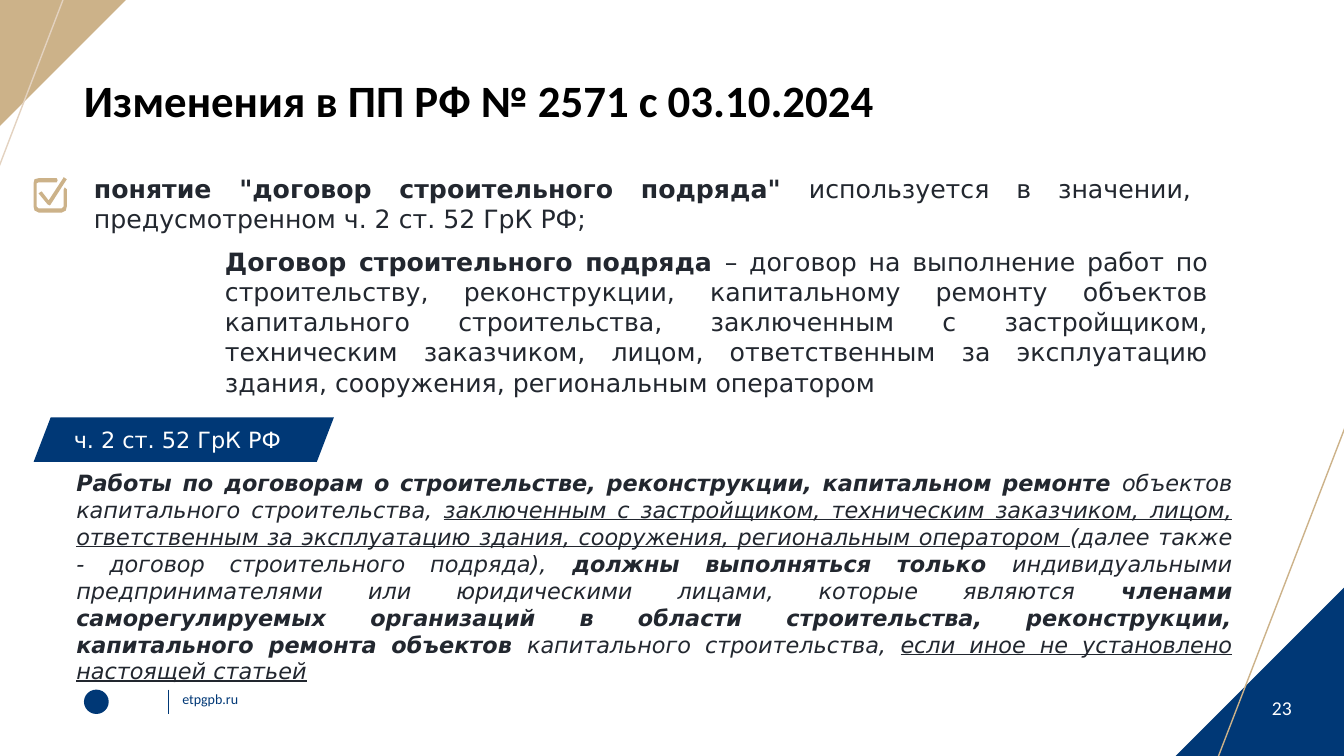
from pptx import Presentation
from pptx.dml.color import RGBColor
from pptx.enum.shapes import MSO_CONNECTOR as CONN, MSO_SHAPE as SHAPE
from pptx.enum.text import MSO_ANCHOR as ANCHOR, MSO_AUTO_SIZE as FIT, PP_ALIGN as ALIGN
from pptx.oxml.ns import qn
from pptx.util import Inches, Pt
from lxml.etree import SubElement

NAVY = RGBColor(0x00, 0x38, 0x76)
GOLD = RGBColor(0xCC, 0xB2, 0x89)
SAND = RGBColor(0xE3, 0xD2, 0xC0)
INK = RGBColor(0x22, 0x27, 0x2F)
BLACK = RGBColor(0, 0, 0)
WHITE = RGBColor(255, 255, 255)
BODY, HEAD = "DejaVu Sans", "Calibri"

prs = Presentation()
prs.slide_width, prs.slide_height = Inches(13.33), Inches(7.5)
COL = prs.slide_width / 160
ROW = prs.slide_height / 90
s = prs.slides.add_slide(prs.slide_layouts[6])


def grid(x, y, w, h):
    return [round(v * unit) for v, unit in zip((x, y, w, h), (COL, ROW, COL, ROW))]


def write(sp, runs, frame, para, font, color):
    tf = sp.text_frame
    p = tf.paragraphs[0]
    for obj, values in ((tf, {"word_wrap": True, **frame}), (p, para)):
        for name, value in values.items():
            setattr(obj, name, value)
    for text, flags in runs:
        r = p.add_run()
        r.text = text
        style = {"bold": "b" in flags, "italic": "i" in flags, "underline": "u" in flags}
        for name, value in {**font, **style}.items():
            setattr(r.font, name, value)
        r.font.color.rgb = color


shapes = {}
for name, kind, box, adj, turn, color in (
    ("corner", SHAPE.ISOSCELES_TRIANGLE, (139.9, 69.9, 20.15, 20.15), 1, 0, NAVY),
    ("top corner", SHAPE.ISOSCELES_TRIANGLE, (0, 0, 15, 15), 1, 180, GOLD),
    ("emblem", SHAPE.OVAL, (10, 82.1, 2.95, 2.9), None, 0, NAVY),
    ("tag", SHAPE.PARALLELOGRAM, (4, 49.7, 35.75, 5.3), 0.384, 0, NAVY),
):
    sp = shapes[name] = s.shapes.add_shape(kind, *grid(*box))
    sp.shadow.inherit = False
    sp.rotation = turn
    sp.fill.solid()
    sp.fill.fore_color.rgb = color
    sp.line.fill.background()
    if adj is not None:
        sp.adjustments[0] = adj

for ends, color, width in (
    ((160.5, 49.9, 144.6, 91.2), GOLD, 1),
    ((7.8, -0.8, -0.6, 21.1), SAND, 1),
    ((20, 82.1, 20, 85), NAVY, 0.5),
):
    sp = s.shapes.add_connector(CONN.STRAIGHT, *grid(*ends))
    sp.line.color.rgb = color
    sp.line.width = Pt(width)
    SubElement(sp._element.spPr, qn("a:effectLst"))

frame_pts = [(5, 1), (23, 1), (24, 3), (23, 5), (5, 5), (3, 6), (3, 29), (5, 31),
             (28, 31), (30, 29), (30, 12), (31, 10), (33, 12), (33, 29), (32, 33),
             (28, 35), (5, 35), (1, 33), (0, 29), (0, 6), (1, 2)]
tick_pts = [(30, 0), (33, 2), (17, 27), (16, 28), (14, 27), (5, 16), (8, 14), (15, 23)]
fb = s.shapes.build_freeform(*frame_pts[0], scale=Inches(0.01))
fb.add_line_segments(frame_pts[1:])
fb.move_to(*tick_pts[0])
fb.add_line_segments(tick_pts[1:])
sp = fb.convert_to_shape(*grid(4, 21.1, 0, 0)[:2])
sp.shadow.inherit = False
sp.fill.solid()
sp.fill.fore_color.rgb = GOLD
sp.line.fill.background()

flush = dict.fromkeys(("margin_left", "margin_top", "margin_right", "margin_bottom"), 0)
grow = {"auto_size": FIT.SHAPE_TO_FIT_TEXT}
justify = {"alignment": ALIGN.JUSTIFY}

for box, runs, frame, para, face, size, color in (
    ((147.75, 81.4, 9.7, 4.3), [("23", "")], {**flush, "vertical_anchor": ANCHOR.BOTTOM},
     {"alignment": ALIGN.CENTER}, HEAD, 14, WHITE),
    ((21.7, 82.2, 13.2, 2), [("etpgpb.ru", "")], {**flush, **grow}, {}, HEAD, 10, NAVY),
    ((10, 9.4, 140, 5.8), [("Изменения в ПП РФ № 2571 с 03.10.2024", "b")],
     {**flush, **grow}, {"line_spacing": 0.9}, HEAD, 32, BLACK),
    ((10, 20, 133, 19.4),
     [("понятие \"договор строительного подряда\" ", "b"),
      ("используется в значении, предусмотренном ч. 2 ст. 52 ГрК РФ;", "")],
     grow, justify, BODY, 18, INK),
    ((25.6, 28.7, 119.4, 26.6),
     [("Договор строительного подряда ", "b"),
      ("– договор на выполнение работ по строительству, реконструкции, капитальному "
       "ремонту объектов капитального строительства, заключенным с застройщиком, "
       "техническим заказчиком, лицом, ответственным за эксплуатацию здания, "
       "сооружения, региональным оператором", "")],
     grow, justify, BODY, 18, INK),
    ((7.9, 55.3, 140, 27.1),
     [("Работы по договорам о строительстве, реконструкции, капитальном ремонте ", "bi"),
      ("объектов капитального строительства, ", "i"),
      ("заключенным с застройщиком, техническим заказчиком, лицом, ответственным за "
       "эксплуатацию здания, сооружения, региональным оператором ", "iu"),
      ("(далее также - договор строительного подряда), ", "i"),
      ("должны выполняться только ", "bi"),
      ("индивидуальными предпринимателями или юридическими лицами, которые являются ", "i"),
      ("членами саморегулируемых организаций в области строительства, реконструкции, "
       "капитального ремонта объектов ", "bi"),
      ("капитального строительства, ", "i"),
      ("если иное не установлено настоящей статьей", "iu")],
     grow, justify, BODY, 16, INK),
):
    sp = s.shapes.add_textbox(*grid(*box))
    write(sp, runs, frame, para, {"name": face, "size": Pt(size)}, color)

tag_frame = {"margin_left": Inches(0.08), "margin_right": Inches(0.08),
             "margin_top": Inches(0.04), "margin_bottom": Inches(0.04),
             "vertical_anchor": ANCHOR.MIDDLE, **grow}
write(shapes["tag"], [("ч. 2 ст. 52 ГрК РФ", "")], tag_frame, {"alignment": ALIGN.LEFT},
      {"name": BODY, "size": Pt(16)}, WHITE)

prs.save("out.pptx")
